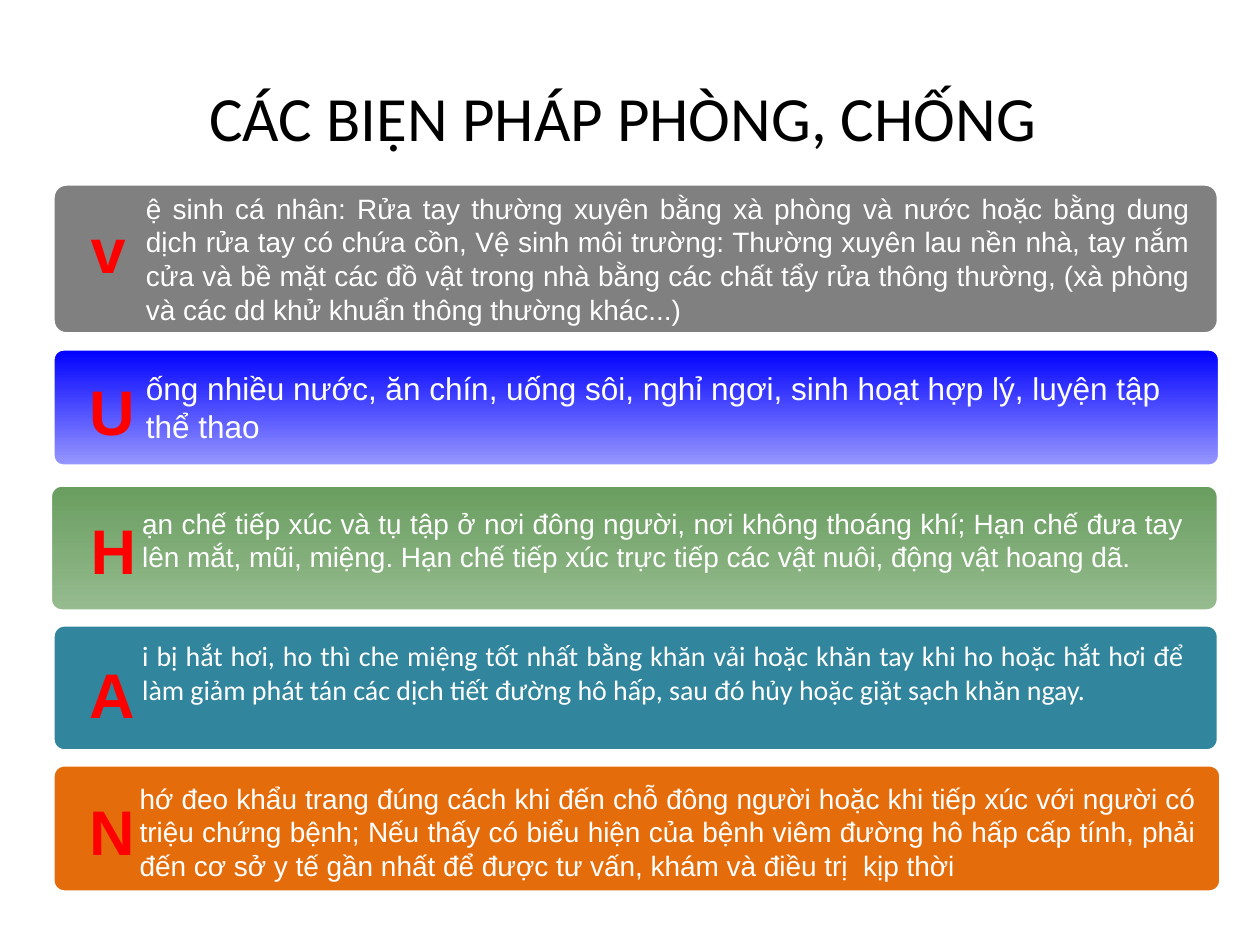
from dataclasses import dataclass

import lxml.etree
import pptx
import pptx.dml.color
import pptx.enum.dml
import pptx.enum.shapes
import pptx.enum.text
import pptx.oxml.ns
import pptx.util

PX = 9144  # EMU per px, 100 px to the inch
RGB = pptx.dml.color.RGBColor.from_string
ALIGN = pptx.enum.text.PP_ALIGN
AUTO_SIZE = pptx.enum.text.MSO_AUTO_SIZE


@dataclass(frozen=True)
class Theme:
    white: str = "FFFFFF"
    black: str = "000000"
    initial: str = "FF0000"
    heading_font: str = "Calibri"
    body_font: str = "Arial"
    heading_size: int = 36
    large_size: int = 18
    body_size: int = 16
    border: int = 2
    outline: int = 3
    corner: float = 0.09


THEME = Theme()


@dataclass(frozen=True)
class Box:
    left: int
    top: int
    width: int
    height: int

    def emu(self) -> tuple[int, ...]:
        return tuple(v * PX for v in (self.left, self.top, self.width, self.height))


@dataclass(frozen=True)
class Measure:
    initial: str
    advice: str
    colours: tuple[str, ...]  # one for a solid band, two for a gradient
    band: Box
    advice_box: Box
    initial_at: tuple[int, int]
    font: str = THEME.body_font
    size: int = THEME.body_size


MEASURES = (
    Measure(
        "v",
        "ệ sinh cá nhân: Rửa tay thường xuyên bằng xà phòng và nước hoặc bằng "
        "dung dịch rửa tay có chứa cồn, Vệ sinh môi trường: Thường xuyên lau nền "
        "nhà, tay nắm cửa và bề mặt các đồ vật trong nhà bằng các chất tẩy rửa "
        "thông thường, (xà phòng và các dd khử khuẩn thông thường khác...)",
        ("808080",), Box(42, 146, 925, 119), Box(106, 147, 848, 118), (62, 162),
    ),
    Measure(
        "U",
        "ống nhiều nước, ăn chín, uống sôi, nghỉ ngơi, sinh hoạt hợp lý, "
        "luyện tập thể thao",
        ("0000FF", "9898FF"), Box(42, 277, 926, 93), Box(106, 288, 825, 71), (61, 291),
        size=THEME.large_size,
    ),
    Measure(
        "H",
        "ạn chế tiếp xúc và tụ tập ở nơi đông người, nơi không thoáng khí; Hạn chế "
        "đưa tay lên mắt, mũi, miệng. Hạn chế tiếp xúc trực tiếp các vật nuôi, "
        "động vật hoang dã. ",
        ("699D5F", "96BB8F"), Box(40, 385, 927, 100), Box(103, 397, 846, 64), (62, 401),
    ),
    Measure(
        "A",
        "i bị hắt hơi, ho thì che miệng tốt nhất bằng khăn vải hoặc khăn tay khi ho "
        "hoặc hắt hơi để làm giảm phát tán các dịch tiết đường hô hấp, sau đó hủy "
        "hoặc giặt sạch khăn ngay.",
        ("31859C",), Box(42, 496, 925, 100), Box(103, 502, 847, 91), (61, 515),
        font=THEME.heading_font,
    ),
    Measure(
        "N",
        "hớ đeo khẩu trang đúng cách khi đến chỗ đông người hoặc khi tiếp xúc với "
        "người có triệu chứng bệnh; Nếu thấy có biểu hiện của bệnh viêm đường hô hấp "
        "cấp tính, phải đến cơ sở y tế gần nhất để được tư vấn, khám và điều trị  "
        "kịp thời",
        ("E46C0A",), Box(42, 607, 927, 101), Box(101, 615, 858, 91), (61, 624),
    ),
)


def write(shape, text: str, font: str, size: int, colour: str, align, bold=None):
    """Put one formatted paragraph in a shape and return it."""
    paragraph = shape.text_frame.paragraphs[0]
    paragraph.add_run().text = text
    paragraph.alignment = align
    paragraph.font.name = font
    paragraph.font.size = pptx.util.Pt(size)
    paragraph.font.bold = bold
    paragraph.font.color.rgb = RGB(colour)
    return paragraph


def outline_text(run, colour: str, width: int) -> None:
    qn = pptx.oxml.ns.qn
    line = lxml.etree.Element(qn("a:ln"), w=str(pptx.util.Pt(width)))
    fill = lxml.etree.SubElement(line, qn("a:solidFill"))
    lxml.etree.SubElement(fill, qn("a:srgbClr"), val=colour)
    run.font._element.insert(0, line)


def draw_band(shapes, box: Box, colours: tuple[str, ...]) -> None:
    band = shapes.add_shape(
        pptx.enum.shapes.MSO_SHAPE.ROUNDED_RECTANGLE, *box.emu())
    band.adjustments[0] = THEME.corner
    band.shadow.inherit = False
    band.line.color.rgb = RGB(THEME.white)
    band.line.width = pptx.util.Pt(THEME.border)
    if len(colours) == 1:
        band.fill.solid()
        band.fill.fore_color.rgb = RGB(colours[0])
        return
    band.fill.gradient()
    band.fill.gradient_angle = 270  # counter-clockwise, so top to bottom
    for stop, colour, position in zip(band.fill.gradient_stops, colours, (0, 1)):
        stop.color.rgb = RGB(colour)
        stop.position = position


def draw_measure(slide, measure: Measure) -> None:
    shapes = slide.shapes.add_group_shape().shapes
    draw_band(shapes, measure.band, measure.colours)

    # Advice beside the initial
    advice = shapes.add_textbox(*measure.advice_box.emu())
    advice.text_frame.word_wrap = True
    advice.text_frame.auto_size = AUTO_SIZE.SHAPE_TO_FIT_TEXT
    write(advice, measure.advice, measure.font, measure.size, THEME.white,
          ALIGN.JUSTIFY)

    # Large initial that begins the advice
    initial = shapes.add_textbox(*Box(*measure.initial_at, 41, 68).emu())
    initial.text_frame.word_wrap = False
    paragraph = write(initial, measure.initial, THEME.body_font, THEME.heading_size,
                      THEME.initial, ALIGN.CENTER, bold=True)
    run = paragraph.runs[0]
    run._r.get_or_add_rPr().insert(0, outline_element(THEME.white, THEME.outline))


def outline_element(colour: str, width: int):
    qn = pptx.oxml.ns.qn
    line = lxml.etree.Element(qn("a:ln"), w=str(int(pptx.util.Pt(width))))
    fill = lxml.etree.SubElement(line, qn("a:solidFill"))
    lxml.etree.SubElement(fill, qn("a:srgbClr"), val=colour)
    return line


def main() -> None:
    deck = pptx.Presentation()
    deck.slide_width, deck.slide_height = 1000 * PX, 750 * PX
    slide = deck.slides.add_slide(deck.slide_layouts[5])

    # Heading
    title = slide.shapes.title
    title.left, title.top, title.width, title.height = Box(50, 30, 900, 125).emu()
    title.text_frame.vertical_anchor = pptx.enum.text.MSO_ANCHOR.MIDDLE
    write(title, "CÁC BIỆN PHÁP PHÒNG, CHỐNG ", THEME.heading_font,
          THEME.heading_size, THEME.black, ALIGN.CENTER)

    # Five measures
    for measure in MEASURES:
        draw_measure(slide, measure)

    deck.save("out.pptx")


if __name__ == "__main__":
    main()
